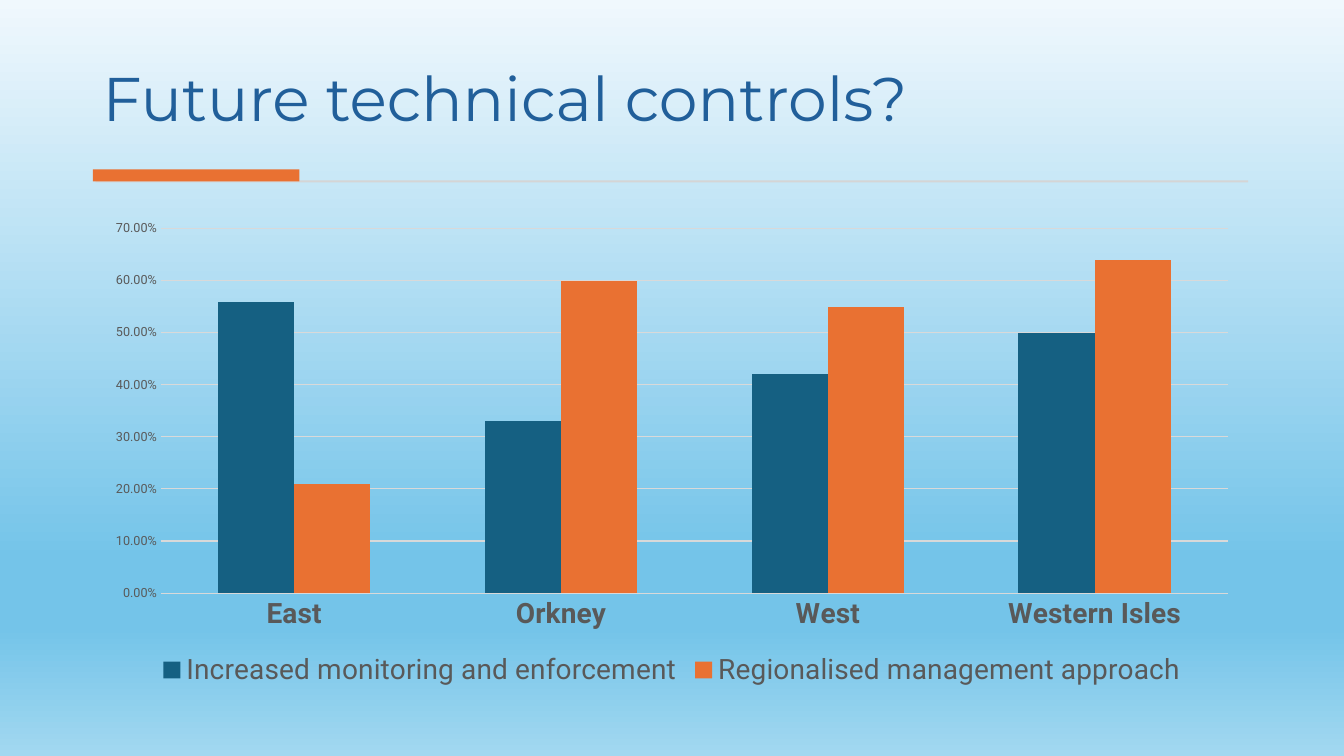
from lxml.etree import SubElement
from pptx import Presentation
from pptx.chart.data import CategoryChartData
from pptx.dml.color import RGBColor
from pptx.enum.chart import XL_CHART_TYPE as ChartType
from pptx.enum.chart import XL_LEGEND_POSITION as LegendPosition
from pptx.enum.chart import XL_TICK_MARK as TickMark
from pptx.enum.shapes import MSO_SHAPE as ShapeType
from pptx.enum.text import MSO_ANCHOR as Anchor
from pptx.oxml.ns import qn
from pptx.util import Inches, Pt

HEADING_BLUE = RGBColor(0x21, 0x5F, 0x9A)
TEAL = RGBColor(0x15, 0x60, 0x82)
ORANGE = RGBColor(0xE9, 0x71, 0x32)
RULE_GREY = RGBColor(0xD5, 0xD5, 0xD5)
GRID_GREY = RGBColor(0xD9, 0xD9, 0xD9)
TEXT_GREY = RGBColor(0x59, 0x59, 0x59)
BLACK = RGBColor(0, 0, 0)
SKY_STOPS = [
    (0, RGBColor(0xF0, 0xF8, 0xFD)),
    (74, RGBColor(0x74, 0xC4, 0xE9)),
    (83, RGBColor(0x74, 0xC4, 0xE9)),
    (100, RGBColor(0xA2, 0xD8, 0xF0)),
]

REGIONS = ["East", "Orkney", "West", "Western Isles"]
CONTROLS = [
    ("Increased monitoring and enforcement", TEAL, [0.56, 0.33, 0.42, 0.5]),
    ("Regionalised management approach", ORANGE, [0.21, 0.6, 0.55, 0.64]),
]


def style_font(font, name, size, color, bold=False):
    font.name = name
    font.size = Pt(size)
    font.bold = bold
    font.color.rgb = color


def fill_background(slide, stops):
    """Fill the slide from top to bottom with (percent, color) stops."""
    fill = slide.background.fill
    fill.gradient()
    fill.gradient_angle = 270
    stop_list = next(slide.element.iter(qn("a:gsLst")))
    stop_list.clear()
    for percent, color in stops:
        stop = SubElement(stop_list, qn("a:gs"), pos=str(percent * 1000))
        SubElement(stop, qn("a:srgbClr"), val=str(color))


def add_title(slide, text):
    box = slide.shapes.add_textbox(Inches(0.92), Inches(0.28), Inches(11.49), Inches(1.11))
    frame = box.text_frame
    frame.word_wrap = True
    frame.vertical_anchor = Anchor.BOTTOM
    paragraph = frame.paragraphs[0]
    paragraph.text = text
    paragraph.line_spacing = 0.9
    style_font(paragraph.font, "Montserrat", 44, HEADING_BLUE)


def add_bar(slide, left, top, width, height, color):
    shape = slide.shapes.add_shape(
        ShapeType.RECTANGLE, Inches(left), Inches(top), Inches(width), Inches(height)
    )
    shape.shadow.inherit = False
    shape.fill.solid()
    shape.fill.fore_color.rgb = color
    shape.line.fill.background()


def style_axis(axis, size, bold=False):
    axis.major_tick_mark = TickMark.NONE
    axis.minor_tick_mark = TickMark.NONE
    axis.format.line.fill.background()
    style_font(axis.tick_labels.font, "Roboto", size, TEXT_GREY, bold)


def add_controls_chart(slide):
    data = CategoryChartData(number_format="0.00%")
    data.categories = REGIONS
    for name, _, values in CONTROLS:
        data.add_series(name, values)
    chart = slide.shapes.add_chart(
        ChartType.COLUMN_CLUSTERED,
        Inches(0.92), Inches(2.1), Inches(11.49), Inches(4.77), data,
    ).chart
    chart.has_title = False
    style_font(chart.font, "Roboto", 10, BLACK)

    plot = chart.plots[0]
    plot.gap_width = 150
    plot.overlap = 0
    plot.vary_by_categories = False
    for series, (_, color, _) in zip(plot.series, CONTROLS):
        series.format.fill.solid()
        series.format.fill.fore_color.rgb = color

    style_axis(chart.category_axis, 20, bold=True)
    value_axis = chart.value_axis
    style_axis(value_axis, 9)
    value_axis.minimum_scale = 0
    value_axis.maximum_scale = 0.7
    value_axis.major_unit = 0.1
    value_axis.tick_labels.number_format = "0.00%"
    value_axis.tick_labels.number_format_is_linked = False
    grid_line = value_axis.major_gridlines.format.line
    grid_line.width = Pt(0.75)
    grid_line.color.rgb = GRID_GREY

    chart.has_legend = True
    chart.legend.position = LegendPosition.BOTTOM
    chart.legend.include_in_layout = False
    style_font(chart.legend.font, "Roboto", 20, TEXT_GREY)


def main():
    presentation = Presentation()
    presentation.slide_width = Inches(13.33)
    presentation.slide_height = Inches(7.5)
    slide = presentation.slides.add_slide(presentation.slide_layouts[6])
    fill_background(slide, SKY_STOPS)
    add_title(slide, "Future technical controls?")
    add_bar(slide, 0.95, 1.79, 11.43, 0.02, RULE_GREY)
    add_bar(slide, 0.92, 1.68, 2.05, 0.12, ORANGE)
    add_controls_chart(slide)
    presentation.save("out.pptx")


if __name__ == "__main__":
    main()
